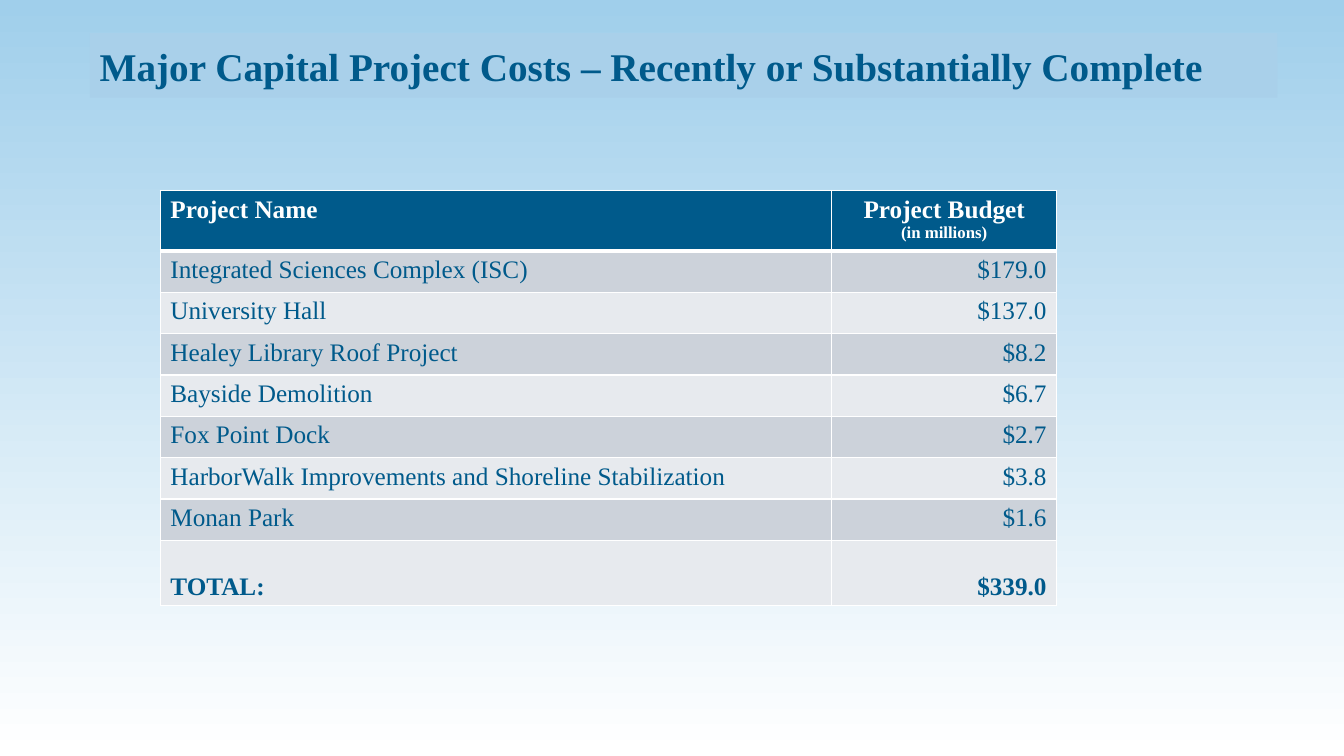
import pptx
import pptx.util
import pptx.dml.color
import pptx.enum.text
import pptx.oxml
import pptx.oxml.ns

Inches = pptx.util.Inches
Pt = pptx.util.Pt
ALIGN = pptx.enum.text.PP_ALIGN
ANCHOR = pptx.enum.text.MSO_ANCHOR

NAVY, WHITE = "005A8B", "FFFFFF"
BANDS = ["CCD2DA", "E7EAEE"]
PROJECTS = [
    ("Integrated Sciences Complex (ISC)", "$179.0"),
    ("University Hall", "$137.0"),
    ("Healey Library Roof Project", "$8.2"),
    ("Bayside Demolition", "$6.7"),
    ("Fox Point Dock", "$2.7"),
    ("HarborWalk Improvements and Shoreline Stabilization", "$3.8"),
    ("Monan Park", "$1.6"),
    ("TOTAL:", "$339.0"),
]


def rgb(value):
    return pptx.dml.color.RGBColor.from_string(value)


class Deck:
    font = "Times New Roman"

    def __init__(self, prs):
        self.s = prs.slides.add_slide(prs.slide_layouts[6])

    def background(self, top, bottom):
        fill = self.s.background.fill
        fill.gradient()
        fill.gradient_angle = 270
        for stop, position, color in zip(fill.gradient_stops, (0, 1), (top, bottom)):
            stop.position = position
            stop.color.rgb = rgb(color)

    def text(self, p, text, color, size=18, bold=False, align=ALIGN.LEFT):
        p.alignment = align
        r = p.add_run()
        r.text = text
        style = {"name": self.font, "size": Pt(size), "bold": bold}
        for name, value in style.items():
            setattr(r.font, name, value)
        r.font.color.rgb = rgb(color)

    def title(self, text, left, top, width, height):
        sp = self.s.shapes.add_textbox(*map(Inches, (left, top, width, height)))
        sp.fill.solid()
        sp.fill.fore_color.rgb = rgb("A9D0EA")
        tf = sp.text_frame
        for name, value in {"word_wrap": True, "vertical_anchor": ANCHOR.MIDDLE}.items():
            setattr(tf, name, value)
        self.text(tf.paragraphs[0], text, NAVY, 28, True)

    def table(self, left, top, widths, heights):
        frame = self.s.shapes.add_table(
            len(heights), len(widths), Inches(left), Inches(top),
            Inches(sum(widths)), Inches(sum(heights)))
        table = frame.table
        table.horz_banding = False
        for column, width in zip(table.columns, widths):
            column.width = Inches(width)
        for row, height in zip(table.rows, heights):
            row.height = Inches(height)
        return table

    def cell(self, cell, fill, top=1, bottom=1):
        # Borders go in before the fill, as the schema orders them
        tc_pr = cell._tc.get_or_add_tcPr()
        for side, width in {"L": 1, "R": 1, "T": top, "B": bottom}.items():
            tc_pr.append(pptx.oxml.parse_xml(
                f'<a:ln{side} {pptx.oxml.ns.nsdecls("a")} w="{Pt(width)}">'
                f'<a:solidFill><a:srgbClr val="{WHITE}"/></a:solidFill></a:ln{side}>'))
        cell.fill.solid()
        cell.fill.fore_color.rgb = rgb(fill)
        return cell.text_frame


def main():
    prs = pptx.Presentation()
    prs.slide_width, prs.slide_height = Inches(13.33), Inches(7.5)
    deck = Deck(prs)
    deck.background("A0CFEB", WHITE)
    deck.title("Major Capital Project Costs – Recently or Substantially Complete",
               0.89, 0.33, 11.78, 0.64)

    # Header row
    heights = [0.56] + [0.41] * (len(PROJECTS) - 1) + [0.65]
    table = deck.table(1.59, 1.89, [6.66, 2.23], heights)
    name, budget = [deck.cell(table.cell(0, c), NAVY, bottom=3) for c in range(2)]
    deck.text(name.paragraphs[0], "Project Name", WHITE, bold=True)
    deck.text(budget.paragraphs[0], "Project Budget", WHITE, 18, True, ALIGN.CENTER)
    deck.text(budget.add_paragraph(), "(in millions)", WHITE, 12, True, ALIGN.CENTER)

    # Projects, with the total in the taller last row
    for i, project in enumerate(PROJECTS):
        total = i == len(PROJECTS) - 1
        for c, (text, align) in enumerate(zip(project, (ALIGN.LEFT, ALIGN.RIGHT))):
            cell = table.cell(i + 1, c)
            tf = deck.cell(cell, BANDS[i % 2], top=3 if i == 0 else 1)
            deck.text(tf.paragraphs[0], text, NAVY, bold=total, align=align)
            if total:
                cell.vertical_anchor = ANCHOR.BOTTOM

    prs.save("out.pptx")


if __name__ == "__main__":
    main()
